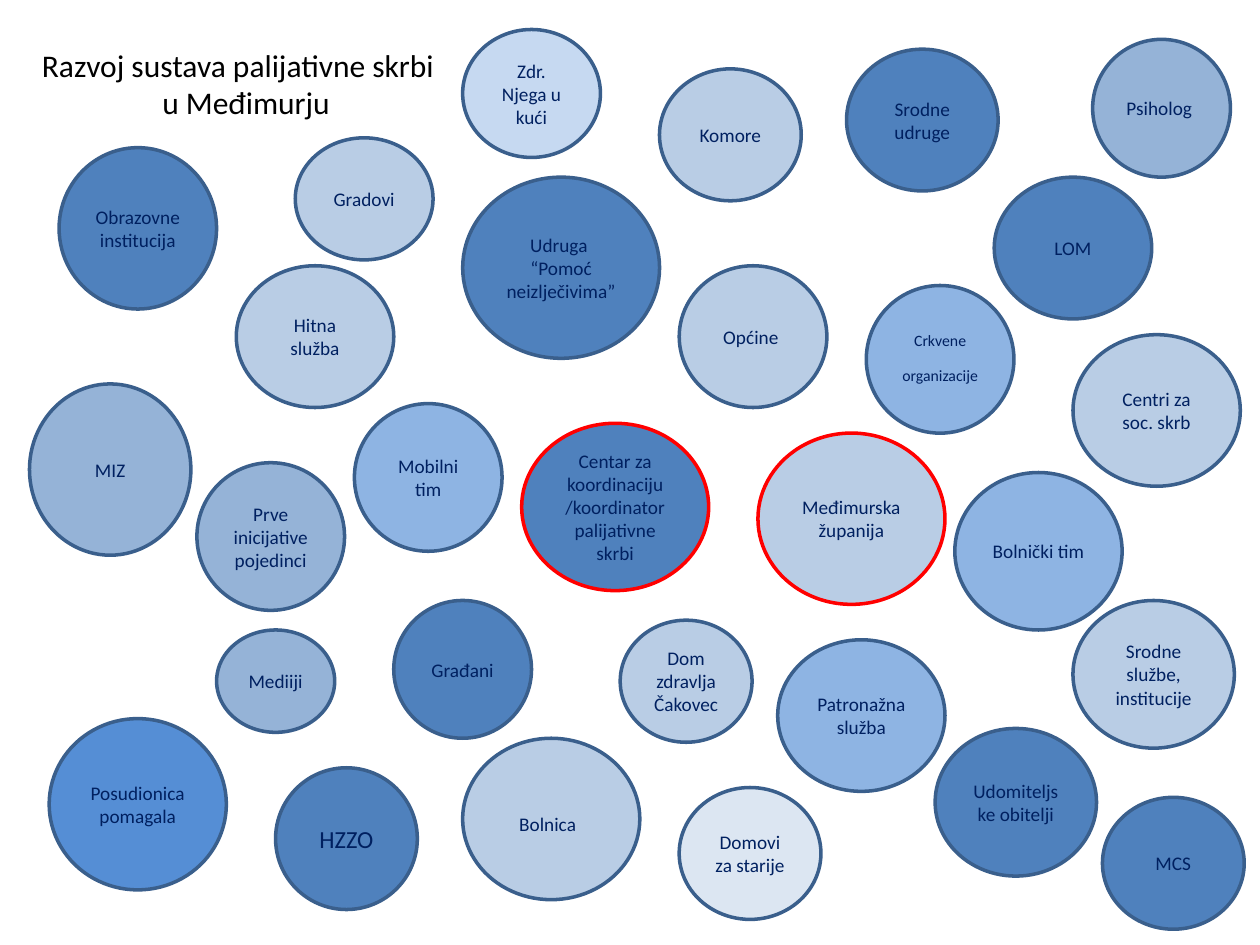
import pptx
import pptx.util
import pptx.dml.color
import pptx.enum.shapes
import pptx.enum.text

COLUMNS, ROWS = 128, 96
CENTER = pptx.enum.text.PP_ALIGN.CENTER
LEFT = pptx.enum.text.PP_ALIGN.LEFT

COLORS = {
    "strong": "4F81BD", "bright": "558ED5", "sky": "8EB4E3", "steel": "95B3D7",
    "pale": "B9CDE5", "light": "C6D9F1", "faint": "DCE6F2",
    "outline": "3A5F8C", "key": "FF0000", "label": "002060", "title": "000000",
}

PARTNERS = [
    ("Prve inicijative pojedinci", 20, 47, 15, 15, "steel", {}),
    ("Udruga \n“Pomoć neizlječivima”", 47, 18, 20, 18.4, "strong", {}),
    ("Općine ", 69, 27, 15, 14.4, "pale", {}),
    ("Građani", 40, 61, 14, 14, "strong", {}),
    ("Bolnički tim", 97, 48, 17, 16, "sky", {}),
    ("Gradovi", 30, 14, 14, 12.4, "pale", {}),
    ("Međimurska županija", 77, 44, 19, 17.4, "pale", {"outline": "key"}),
    ("Mobilni tim", 36, 41, 15, 15, "sky", {}),
    ("Srodne udruge", 86, 5, 15.4, 14.4, "strong", {}),
    ("Posudionica pomagala", 5, 73, 18, 17.4, "bright", {}),
    ("Hitna služba", 24, 27, 16, 14.4, "pale", {}),
    ("Centar za koordinaciju /koordinator palijativne skrbi",
     53, 43, 19, 17, "strong", {"outline": "key"}),
    ("LOM", 101, 18, 16, 14.4, "strong", {}),
    ("Patronažna služba", 79, 65, 17, 15.4, "sky", {}),
    ("Centri za soc. skrb", 109, 34, 17, 15.4, "pale", {}),
    ("Domovi za starije", 69, 80, 14.4, 13.4, "faint", {}),
    ("Bolnica", 47, 75, 18, 16.4, "pale", {"tail_size": 18}),
    ("Udomiteljske obitelji", 95, 74, 16.4, 15, "strong", {}),
    ("Zdr. Njega u kući", 47, 3, 14, 13, "light", {}),
    ("Obrazovne institucija", 6, 15, 16, 16.4, "strong", {}),
    ("Psiholog ", 111, 4, 14, 14, "steel", {}),
    ("HZZO", 28, 78, 14.4, 14.4, "strong", {"size": 14}),
    ("Komore", 67, 7, 14.4, 13.4, "pale", {}),
    ("MIZ", 3, 39, 16.4, 17.4, "steel", {}),
    ("Srodne službe, institucije", 109, 61, 16.4, 15, "pale", {}),
    ("Dom zdravlja Čakovec", 63, 63, 13.4, 12.4, "pale", {}),
    ("Crkvene organizacije", 88, 29, 15, 15, "sky", {"size": 9, "tail_size": 18}),
    ("MCS", 112, 81, 14.4, 13.4, "strong", {}),
    ("Mediiji", 22, 64, 12, 10.4, "steel", {}),
]


def rgb(name):
    return pptx.dml.color.RGBColor.from_string(COLORS[name])


class PartnerMap:
    font = "Calibri"
    outline_width = pptx.util.Pt(2)

    def __init__(self, deck):
        self.deck = deck
        self.slide = deck.slides.add_slide(deck.slide_layouts[6])

    def place(self, column, row, columns, rows):
        across = self.deck.slide_width / COLUMNS
        down = self.deck.slide_height / ROWS
        return [round(length) for length in
                (column * across, row * down, columns * across, rows * down)]

    def add_wording(self, paragraph, wording, size, color):
        run = paragraph.add_run()
        run.text = wording
        run.font.color.rgb = rgb(color)
        for key, value in {"name": self.font, "size": pptx.util.Pt(size)}.items():
            setattr(run.font, key, value)

    def fill_frame(self, frame, lines, size, color, aligns, anchor):
        for key, value in {"word_wrap": True, "vertical_anchor": anchor}.items():
            setattr(frame, key, value)
        for index, (line, align) in enumerate(zip(lines, aligns)):
            paragraph = frame.add_paragraph() if index else frame.paragraphs[0]
            paragraph.alignment = align
            self.add_wording(paragraph, line, size, color)

    def title(self, lines, aligns, *cell):
        heading = self.slide.shapes.add_textbox(*self.place(*cell))
        self.fill_frame(heading.text_frame, lines, 18, "title", aligns,
                        pptx.enum.text.MSO_ANCHOR.TOP)

    def partner(self, wording, column, row, columns, rows, fill,
                outline="outline", size=11, tail_size=None):
        circle = self.slide.shapes.add_shape(
            pptx.enum.shapes.MSO_SHAPE.FLOWCHART_CONNECTOR,
            *self.place(column, row, columns, rows))
        circle.shadow.inherit = False
        circle.fill.solid()
        circle.fill.fore_color.rgb = rgb(fill)
        circle.line.color.rgb = rgb(outline)
        circle.line.width = self.outline_width
        lines = wording.split("\n")
        self.fill_frame(circle.text_frame, lines, size, "label", [CENTER] * len(lines),
                        pptx.enum.text.MSO_ANCHOR.MIDDLE)
        if tail_size:
            self.add_wording(circle.text_frame.paragraphs[-1], " ", tail_size, "label")


def main():
    deck = pptx.Presentation()
    deck.slide_width = pptx.util.Inches(10)
    deck.slide_height = pptx.util.Inches(7.5)
    care_map = PartnerMap(deck)
    care_map.title(["Razvoj sustava palijativne skrbi", "u Međimurju"],
                   [LEFT, CENTER], 3, 4, 44, 9)
    for *details, accents in PARTNERS:
        care_map.partner(*details, **accents)
    deck.save("out.pptx")


if __name__ == "__main__":
    main()
